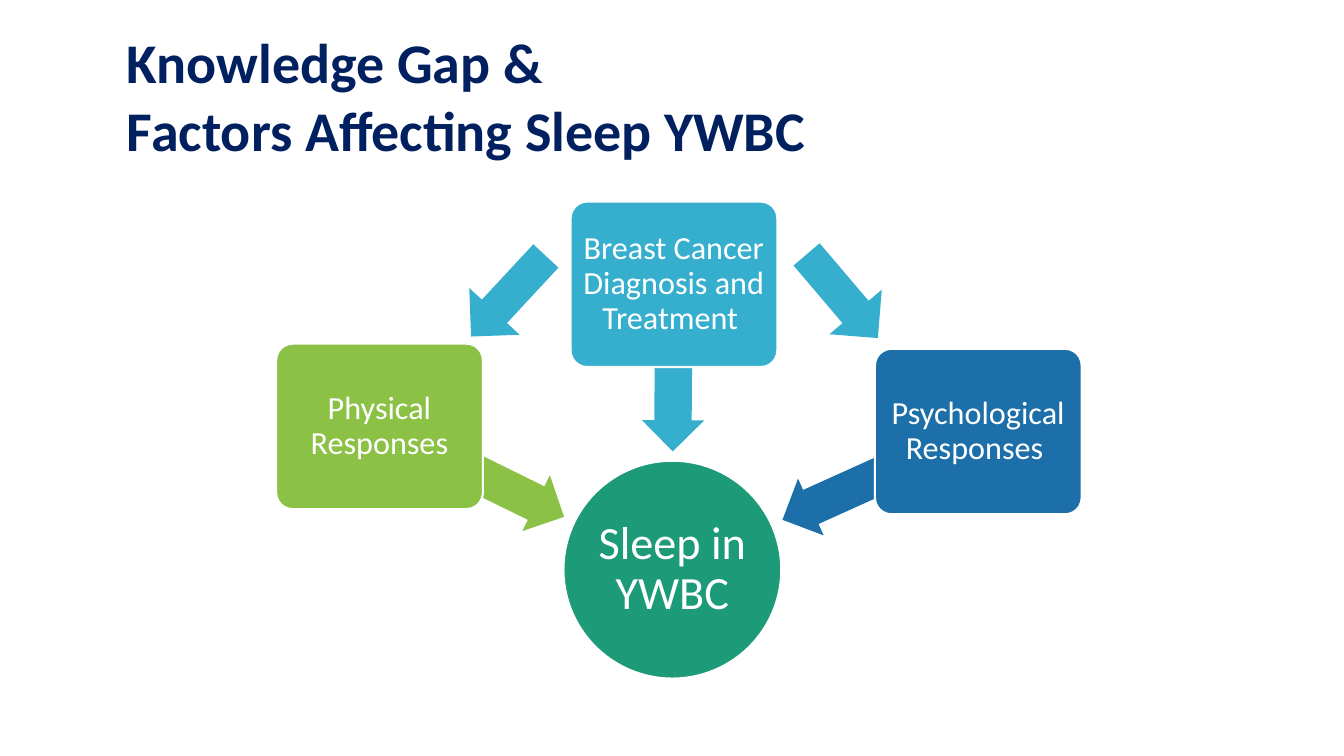
"""Draw the factors that affect sleep in YWBC as boxes and arrows."""
from dataclasses import dataclass

from pptx import Presentation
from pptx import util as u
from pptx.dml.color import RGBColor
from pptx.enum import shapes, text
from pptx.shapes.autoshape import Shape
from pptx.slide import Slide
from pptx.text.text import TextFrame

KIND = shapes.MSO_SHAPE


@dataclass(frozen=True)
class Theme:
    navy: str = "002060"
    white: str = "FFFFFF"
    teal: str = "1D9A78"
    green: str = "8BC145"
    sky: str = "36AFCE"
    blue: str = "1D6FA9"
    font: str = "Calibri"
    head: int = 40
    large: int = 33
    small: int = 23


@dataclass(frozen=True)
class Node:
    label: str
    left: float
    top: float
    fill: str
    size: int
    kind: KIND = KIND.ROUNDED_RECTANGLE
    wide: float = 5.21
    high: float = 4.17
    inset: float = 0.12


@dataclass(frozen=True)
class Arrow:
    left: float
    top: float
    wide: float
    high: float
    turn: float
    fill: str
    shaft: float = 0.6


LOOK = Theme()
ARROWS = (
    Arrow(9.32, 11.1, 5.16, 1.57, 206.2, LOOK.green),
    Arrow(14.86, 8.48, 4.22, 1.57, 270.4, LOOK.sky),
    Arrow(19.48, 11.2, 5.41, 1.57, 335.7, LOOK.blue),
    Arrow(11.43, 6.6, 2.77, 1.73, 312.9, LOOK.sky, 0.5),
    Arrow(19.84, 6.6, 2.77, 1.73, 229.6, LOOK.sky, 0.5),
)
NODES = (
    Node("Sleep in YWBC", 14.2, 11.61, LOOK.teal, LOOK.large,
         KIND.OVAL, 5.49, 5.49, 0.05),
    Node("Physical Responses", 6.96, 8.66, LOOK.green, LOOK.small),
    Node("Breast Cancer Diagnosis and Treatment ", 14.38, 5.08,
         LOOK.sky, LOOK.small),
    Node("Psychological Responses ", 22.05, 8.79, LOOK.blue, LOOK.small),
)


def write(frame: TextFrame, words: str, size: int, color: str, bold: bool,
          align: text.PP_ALIGN, space: float, side: float, edge: float) -> None:
    """Fill a text frame and format its runs."""
    frame.text = words
    frame.word_wrap = True
    frame.auto_size = text.MSO_AUTO_SIZE.NONE
    frame.vertical_anchor = text.MSO_ANCHOR.MIDDLE
    frame.margin_left = frame.margin_right = u.Cm(side)
    frame.margin_top = frame.margin_bottom = u.Cm(edge)
    for para in frame.paragraphs:
        para.alignment = align
        para.line_spacing = space
        for run in para.runs:
            run.font.name = LOOK.font
            run.font.size = u.Pt(size)
            run.font.bold = bold
            run.font.color.rgb = RGBColor.from_string(color)


def place(slide: Slide, kind: KIND, item: Node | Arrow) -> Shape:
    """Add a filled shape without a shadow."""
    shape = slide.shapes.add_shape(
        kind, u.Cm(item.left), u.Cm(item.top), u.Cm(item.wide), u.Cm(item.high))
    shape.shadow.inherit = False
    shape.fill.solid()
    shape.fill.fore_color.rgb = RGBColor.from_string(item.fill)
    return shape


def point(slide: Slide, arrow: Arrow) -> None:
    """Draw one turned block arrow."""
    shape = place(slide, KIND.LEFT_ARROW, arrow)
    shape.line.fill.background()
    shape.adjustments[0] = arrow.shaft
    shape.rotation = arrow.turn


def draw(slide: Slide, node: Node) -> None:
    """Draw one labelled node with a white rim."""
    shape = place(slide, node.kind, node)
    shape.line.color.rgb = RGBColor.from_string(LOOK.white)
    shape.line.width = u.Pt(1.5)
    if node.kind == KIND.ROUNDED_RECTANGLE:
        shape.adjustments[0] = 0.1
    write(shape.text_frame, node.label, node.size, LOOK.white, False,
          text.PP_ALIGN.CENTER, 0.9, node.inset, node.inset)


def main() -> None:
    """Build and save the slide."""
    deck = Presentation()
    deck.slide_width, deck.slide_height = u.Cm(33.87), u.Cm(19.05)
    slide = deck.slides.add_slide(deck.slide_layouts[5])
    title = slide.shapes.title
    title.left, title.top = u.Cm(2.54), u.Cm(0.53)
    title.width, title.height = u.Cm(28.78), u.Cm(3.73)
    write(title.text_frame, "Knowledge Gap &\nFactors Affecting Sleep YWBC",
          LOOK.head, LOOK.navy, True, text.PP_ALIGN.LEFT, 1.0, 0.66, 0.33)
    for arrow in ARROWS:
        point(slide, arrow)
    for node in NODES:
        draw(slide, node)
    deck.save("out.pptx")


if __name__ == "__main__":
    main()
